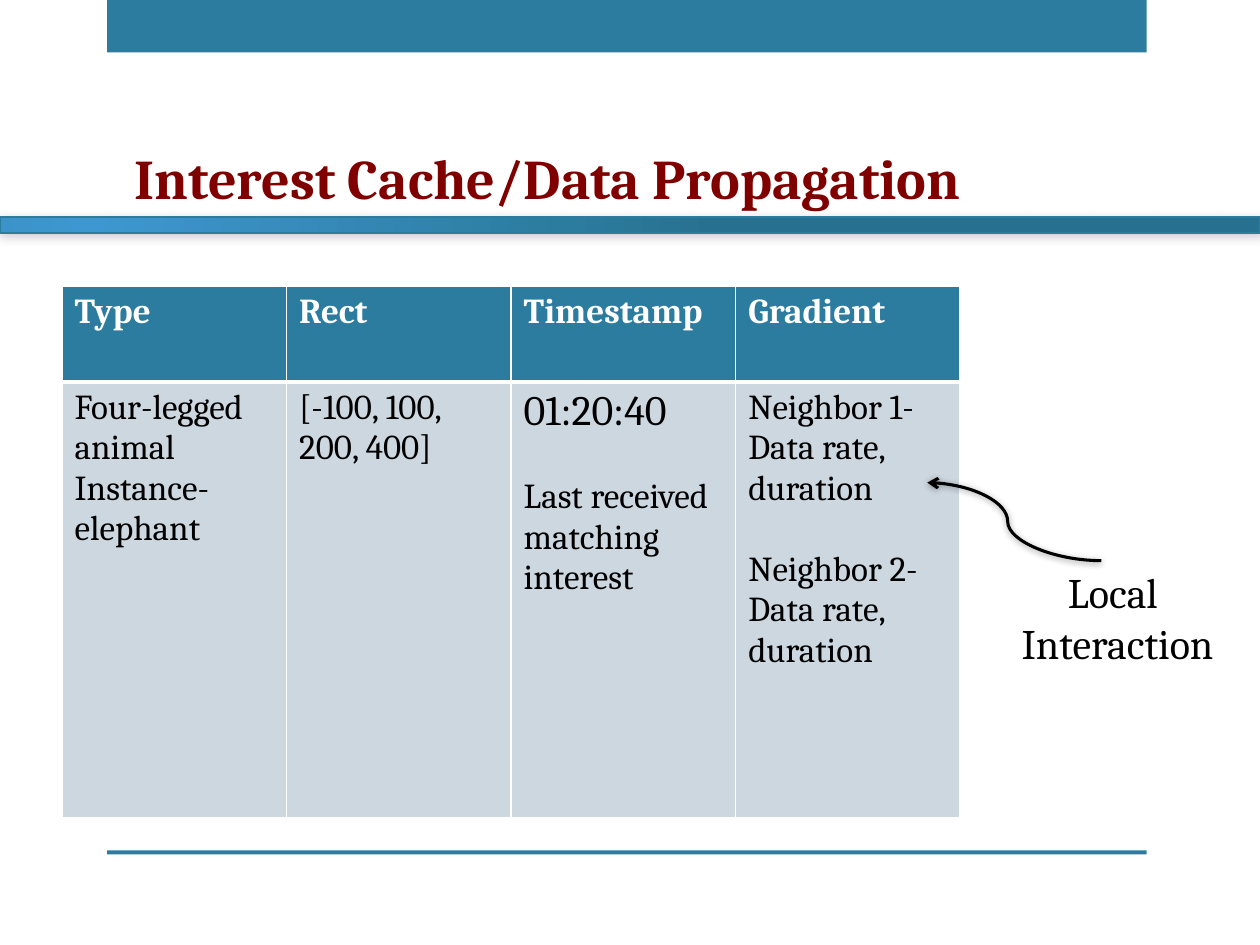
from lxml import etree
from pptx import Presentation
from pptx.dml.color import RGBColor
from pptx.enum.shapes import MSO_CONNECTOR, MSO_SHAPE
from pptx.enum.text import MSO_ANCHOR, PP_ALIGN
from pptx.oxml import parse_xml
from pptx.oxml.ns import qn
from pptx.util import Pt

RECTANGLE = MSO_SHAPE.RECTANGLE
CURVE = MSO_CONNECTOR.CURVE
TOP, BOTTOM = MSO_ANCHOR.TOP, MSO_ANCHOR.BOTTOM
LEFT, CENTER = PP_ALIGN.LEFT, PP_ALIGN.CENTER

TEAL = RGBColor(0x2C, 0x7C, 0x9F)
SKY = RGBColor(0x3F, 0x97, 0xD1)
DEEP_TEAL = RGBColor(0x28, 0x70, 0x8F)
PALE = RGBColor(0xCD, 0xD7, 0xDF)
MAROON = RGBColor(0x80, 0x00, 0x00)
WHITE = RGBColor(0xFF, 0xFF, 0xFF)
BLACK = RGBColor(0x00, 0x00, 0x00)

DRAWING_NS = 'xmlns:a="http://schemas.openxmlformats.org/drawingml/2006/main"'


class SlideBuilder:
    font = "Cambria"
    body_size = 20
    gap = 23.4  # one line of body text

    def __init__(self, slide):
        self.slide = slide

    def style(self, paragraph, size, color, bold=False, align=LEFT):
        paragraph.alignment = align
        font = paragraph.font
        font.name, font.size, font.bold = self.font, Pt(size), bold
        font.color.rgb = color

    def bar(self, left, top, width, height, color=TEAL):
        bar = self.slide.shapes.add_shape(
            RECTANGLE, Pt(left), Pt(top), Pt(width), Pt(height))
        bar.shadow.inherit = False
        bar.fill.solid()
        bar.fill.fore_color.rgb = color
        bar.line.fill.background()
        return bar

    def glow_bar(self, left, top, width, height, stops):
        bar = self.bar(left, top, width, height)
        bar.line.color.rgb = TEAL
        bar.line.width = Pt(1.25)
        properties = bar.fill._xPr
        stop_xml = "".join(
            f'<a:gs pos="{percent * 1000}"><a:srgbClr val="{color}"/></a:gs>'
            for percent, color in stops)
        gradient = parse_xml(
            f'<a:gradFill {DRAWING_NS} rotWithShape="1"><a:gsLst>{stop_xml}</a:gsLst>'
            '<a:path path="circle"><a:fillToRect l="15000" t="15000" r="100000"'
            ' b="100000"/></a:path></a:gradFill>')
        properties.replace(properties.find(qn("a:solidFill")), gradient)
        self.shadow(properties, opacity=20, blur=6, distance=1, angle=45)

    def shadow(self, properties, opacity, blur, distance, angle):
        effects = properties.find(qn("a:effectLst"))
        if effects is None:
            effects = etree.SubElement(properties, qn("a:effectLst"))
        effects.append(parse_xml(
            f'<a:outerShdw {DRAWING_NS} blurRad="{Pt(blur)}" dist="{Pt(distance)}"'
            f' dir="{angle * 60000}" rotWithShape="0"><a:srgbClr val="{BLACK}">'
            f'<a:alpha val="{opacity * 1000}"/></a:srgbClr></a:outerShdw>'))

    def text(self, left, top, width, height, lines, size, color,
             bold=False, align=LEFT, anchor=TOP, wrap=True):
        frame = self.slide.shapes.add_textbox(
            Pt(left), Pt(top), Pt(width), Pt(height)).text_frame
        frame.word_wrap = wrap
        frame.vertical_anchor = anchor
        frame.text = "\n".join(lines)
        for paragraph in frame.paragraphs:
            self.style(paragraph, size, color, bold, align)

    def cell(self, cell, groups, fill, color, bold, borders):
        """Fill a cell with groups of paragraphs, one line apart."""
        properties = cell._tc.get_or_add_tcPr()
        for side, width in zip("LRTB", borders):
            properties.append(parse_xml(
                f'<a:ln{side} {DRAWING_NS} w="{Pt(width)}"><a:solidFill>'
                f'<a:srgbClr val="{WHITE}"/></a:solidFill></a:ln{side}>'))
        cell.fill.solid()
        cell.fill.fore_color.rgb = fill
        cell.text = "\n".join(line for group in groups for line in group)
        paragraphs = iter(cell.text_frame.paragraphs)
        for number, group in enumerate(groups):
            for position, _ in enumerate(group):
                paragraph = next(paragraphs)
                self.style(paragraph, self.body_size, color, bold)
                if number and not position:
                    paragraph.space_before = Pt(self.gap)

    def table(self, left, top, column_width, heights, columns):
        table = self.slide.shapes.add_table(
            2, len(columns), Pt(left), Pt(top),
            Pt(column_width * len(columns)), Pt(sum(heights))).table
        for row, height in zip(table.rows, heights):
            row.height = Pt(height)
        for index, (heading, groups) in enumerate(columns):
            table.columns[index].width = Pt(column_width)
            self.cell(table.cell(0, index), [[heading]], TEAL, WHITE, True, (1, 1, 1, 3))
            self.cell(table.cell(1, index), groups, PALE, BLACK, False, (1, 1, 3, 1))
        return table

    def curved_arrow(self, start, end, bend):
        arrow = self.slide.shapes.add_connector(CURVE, *map(Pt, start + end))
        arrow.line.color.rgb = BLACK
        arrow.line.width = Pt(1.75)
        properties = arrow._element.spPr
        guides = properties.find(qn("a:prstGeom")).get_or_add_avLst()
        etree.SubElement(guides, qn("a:gd"), name="adj1", fmla=f"val {bend * 1000:.0f}")
        etree.SubElement(arrow.line._get_or_add_ln(), qn("a:tailEnd"), type="arrow")
        self.shadow(properties, opacity=40, blur=4, distance=1, angle=88)


def main():
    presentation = Presentation()
    presentation.slide_width, presentation.slide_height = Pt(720), Pt(540)
    builder = SlideBuilder(presentation.slides.add_slide(presentation.slide_layouts[6]))

    # Frame bars
    builder.bar(61.2, 0, 594, 30)
    builder.bar(61.2, 486, 594, 2.2)

    # Title and rule
    builder.text(69.8, 36.7, 534.2, 87.1, ["Interest Cache/Data Propagation"],
                 32, MAROON, bold=True, anchor=BOTTOM)
    builder.glow_bar(0, 124, 720, 9, [(0, SKY), (76, TEAL), (100, DEEP_TEAL)])

    # Interest cache
    cache = builder.table(35.5, 163.5, 128.3, (54.7, 249.1), [
        ("Type", [["Four-legged animal", "Instance-elephant"]]),
        ("Rect", [["[-100, 100, 200, 400]"]]),
        ("Timestamp", [["01:20:40"], ["Last received matching interest"]]),
        ("Gradient", [["Neighbor 1-", "Data rate, duration"],
                      ["Neighbor 2-", "Data rate, duration"]]),
    ])
    cache.cell(1, 2).text_frame.paragraphs[0].font.size = Pt(24)

    # Local interaction callout
    builder.text(573.8, 320.4, 129.6, 65.5, ["Local ", "Interaction"],
                 24, BLACK, align=CENTER, wrap=False)
    builder.curved_arrow((629.3, 320.4), (529.9, 275.8), bend=53.8)

    presentation.save("out.pptx")


if __name__ == "__main__":
    main()
